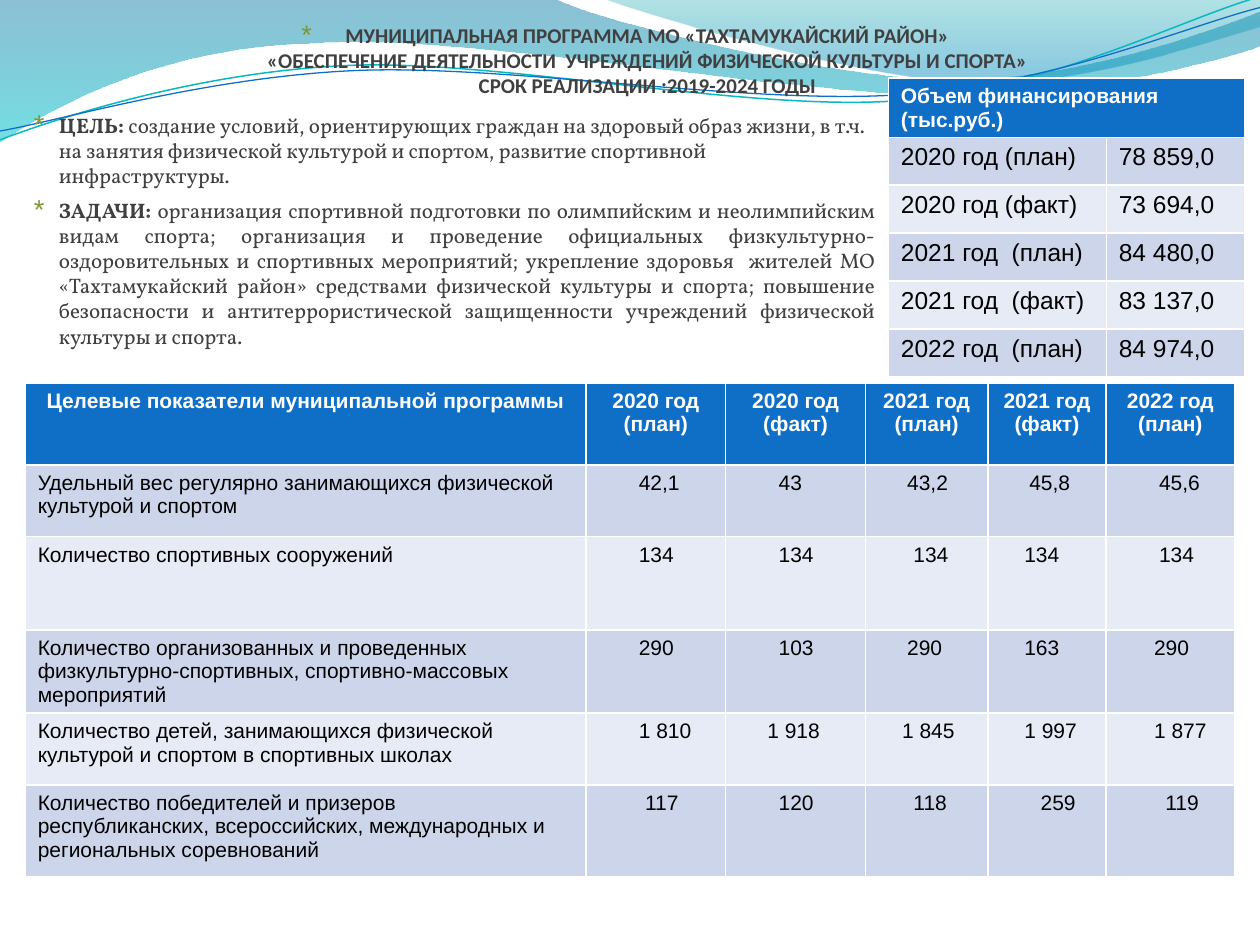
from lxml.etree import SubElement
from pptx import Presentation
from pptx.dml.color import RGBColor
from pptx.enum.text import PP_ALIGN as Align
from pptx.oxml.ns import qn
from pptx.util import Inches, Pt

COLORS = {
    "white": "FFFFFF", "black": "000000", "text": "404040", "bullet": "7E9632",
    "header": "0F6FC6", "odd": "CCD5EA", "even": "E7EBF5", "teal": "0AB8BF",
    "deep blue": "0074A1", "cyan": "00C6CF", "sea": "00A1A9", "sky": "008BBF",
}

# Curves: a start point, then straight (2 numbers) or cubic (6 numbers) steps
LEFT_WAVE = [(0, 0), (4.4, -0.01), (4.76, 0.17, 6.64, 0.63, 7.58, 0.63),
             (8.53, 0.63, 9.58, 0.26, 10, 0.09), (10.01, 0.36),
             (9.83, 0.44, 8.7, 0.76, 7.46, 0.75), (6.22, 0.75, 3.82, 0.28, 2.57, 0.34),
             (1.29, 0.36, 0.46, 0.83, -0.01, 1.13)]
RIGHT_WAVE = [(4.79, -0.01), (5.09, 0.11, 6.82, 0.62, 7.69, 0.65),
              (8.56, 0.69, 9.61, 0.32, 10, 0.21), (10, 0)]
TEAL_LINE = [(0, 1.11), (0.48, 0.93, 1.58, 0.57, 2.77, 0.52),
             (3.95, 0.47, 5.93, 0.89, 7.13, 0.8), (8.33, 0.71, 9.38, 0.15, 9.98, -0.02)]
BLUE_LINE = [(0, 1.04), (0.47, 0.96, 1.64, 0.61, 2.83, 0.56),
             (4.03, 0.51, 5.97, 0.84, 7.17, 0.75), (8.36, 0.67, 9.41, 0.21, 10, 0.06)]

TITLE = ("МУНИЦИПАЛЬНАЯ ПРОГРАММА МО «ТАХТАМУКАЙСКИЙ РАЙОН»\v"
         "«ОБЕСПЕЧЕНИЕ ДЕЯТЕЛЬНОСТИ  УЧРЕЖДЕНИЙ ФИЗИЧЕСКОЙ КУЛЬТУРЫ И СПОРТА»\v"
         "СРОК РЕАЛИЗАЦИИ :2019-2024 ГОДЫ")
GOAL = ("создание условий, ориентирующих граждан на здоровый образ жизни, в т.ч. на занятия "
        "физической культурой и спортом, развитие спортивной инфраструктуры.")
TASKS = ("организация спортивной подготовки по олимпийским и неолимпийским видам спорта; "
         "организация и проведение официальных физкультурно-оздоровительных и спортивных "
         "мероприятий; укрепление здоровья  жителей МО «Тахтамукайский район» средствами "
         "физической культуры и спорта; повышение безопасности и антитеррористической "
         "защищенности учреждений физической культуры и спорта.")

FUNDING = [
    ["Объем финансирования (тыс.руб.)", ""],
    ["2020 год (план)", "78 859,0"],
    ["2020 год (факт)", "73 694,0"],
    ["2021 год  (план)", "84 480,0"],
    ["2021 год  (факт)", "83 137,0"],
    ["2022 год  (план)", "84 974,0"],
]
TARGETS = [
    ["Целевые показатели муниципальной программы", "2020 год\n(план)", "2020 год (факт)",
     "2021 год\n(план)", "2021 год\n(факт)", "2022 год\n(план)"],
    ["Удельный вес регулярно занимающихся физической культурой и спортом",
     "42,1", "43", "43,2", "45,8", "45,6"],
    ["Количество спортивных сооружений", "134", "134", "134", "134", "134"],
    ["Количество организованных и проведенных физкультурно-спортивных, "
     "спортивно-массовых мероприятий", "290", "103", "290", "163", "290"],
    ["Количество детей, занимающихся физической культурой и спортом в спортивных школах",
     "1 810", "1 918", "1 845", "1 997", "1 877"],
    ["Количество победителей и призеров республиканских, всероссийских, международных и "
     "региональных соревнований", "117", "120", "118", "259", "119"],
]
# Left cell margins that place the target values, in inches
TARGET_MARGINS = [
    [0.1, 0.42, 0.42, 0.33, 0.33, 0.42],
    [0.1, 0.42, 0.42, 0.38, 0.29, 0.42],
    [0.1, 0.42, 0.42, 0.33, 0.29, 0.38],
    [0.1, 0.42, 0.33, 0.29, 0.29, 0.38],
    [0.1, 0.47, 0.42, 0.38, 0.42, 0.47],
]


def color(name):
    return RGBColor.from_string(COLORS[name])


class SlideBuilder:
    def __init__(self, slide):
        self.slide = slide

    def curve(self, steps, closed=False):
        """Draw the control polygon in 1/100 inch, then bend its cubic steps."""
        points = [(round(step[i] * 100), round(step[i + 1] * 100))
                  for step in steps for i in range(0, len(step), 2)]
        builder = self.slide.shapes.build_freeform(*points[0], scale=Inches(0.01))
        builder.add_line_segments(points[1:], close=closed)
        shape = builder.convert_to_shape()
        shape.shadow.inherit = False
        segments = iter(list(shape.element.iter(qn("a:lnTo"))))
        for step in steps[1:]:
            first = next(segments)
            if len(step) == 6:
                first.tag = qn("a:cubicBezTo")
                for _ in range(2):
                    segment = next(segments)
                    first.append(segment[0])
                    segment.getparent().remove(segment)
        return shape

    def wave(self, steps, stops):
        shape = self.curve(steps, closed=True)
        shape.line.fill.background()
        shape.fill.gradient()
        shape.fill.gradient_angle = 270
        for stop, (position, name, _) in zip(shape.fill.gradient_stops, stops):
            stop.position = position
            stop.color.rgb = color(name)
        for element, (_, _, opacity) in zip(shape.element.iter(qn("a:srgbClr")), stops):
            SubElement(element, qn("a:alpha"), val=str(opacity * 1000))

    def wave_line(self, steps, name, width):
        shape = self.curve(steps)
        shape.fill.background()
        shape.line.color.rgb = color(name)
        shape.line.width = Pt(width)

    def text_box(self, left, top, width, height):
        shape = self.slide.shapes.add_textbox(*map(Inches, (left, top, width, height)))
        shape.text_frame.word_wrap = True
        return shape.text_frame

    def style(self, paragraph, font, size, name, align, bold=None):
        paragraph.alignment = align
        paragraph.font.name = font
        paragraph.font.size = Pt(size)
        paragraph.font.color.rgb = color(name)
        paragraph.font.bold = bold

    def bullet(self, paragraph, margin, hanging, percent):
        properties = paragraph._p.get_or_add_pPr()
        properties.set("marL", str(Inches(margin)))
        properties.set("indent", str(-Inches(hanging)))
        bullet_color = SubElement(properties, qn("a:buClr"))
        SubElement(bullet_color, qn("a:srgbClr"), val=COLORS["bullet"])
        SubElement(properties, qn("a:buSzPct"), val=str(percent * 1000))
        SubElement(properties, qn("a:buFont"), typeface="Arial")
        SubElement(properties, qn("a:buChar"), char="*")

    def table(self, left, top, widths, heights, rows, size, header_align, margins=None):
        """The default table style supplies the white cell borders."""
        frame = self.slide.shapes.add_table(
            len(rows), len(widths), Inches(left), Inches(top),
            Inches(sum(widths)), Inches(sum(heights)))
        table = frame.table
        for column, width in zip(table.columns, widths):
            column.width = Inches(width)
        for r, (row, height) in enumerate(zip(rows, heights)):
            table.rows[r].height = Inches(height)
            header = r == 0
            for c, text in enumerate(row):
                cell = table.cell(r, c)
                cell.fill.solid()
                cell.fill.fore_color.rgb = color("header" if header else "odd" if r % 2 else "even")
                cell.margin_bottom = 0
                if margins and not header:
                    cell.margin_left = Inches(margins[r - 1][c])
                cell.text = text
                for paragraph in cell.text_frame.paragraphs:
                    self.style(paragraph, "Arial", 12 if header else size,
                               "white" if header else "black",
                               header_align if header else Align.LEFT, header)
        return table


def main():
    presentation = Presentation()
    presentation.slide_width, presentation.slide_height = Inches(10), Inches(7.5)
    builder = SlideBuilder(presentation.slides.add_slide(presentation.slide_layouts[6]))

    # Wavy header
    builder.wave(LEFT_WAVE, [(0, "deep blue", 45), (1, "cyan", 55)])
    builder.wave(RIGHT_WAVE, [(0, "sea", 30), (0.8, "sky", 45)])
    builder.wave_line(TEAL_LINE, "teal", 0.85)
    builder.wave_line(BLUE_LINE, "header", 0.75)

    # Title
    title = builder.text_box(0.28, 0.13, 9.37, 0.94).paragraphs[0]
    title.text = TITLE
    builder.bullet(title, 0.35, 0.35, 128)
    builder.style(title, "Calibri", 12, "text", Align.CENTER, True)

    # Funding table
    funding = builder.table(7.05, 0.62, [1.73, 1.1], [0.47] + [0.38] * 5,
                            FUNDING, 14, Align.LEFT)
    funding.cell(0, 0).merge(funding.cell(0, 1))

    # Goal and tasks
    body = builder.text_box(0.12, 0.84, 6.93, 2.52)
    sections = [("ЦЕЛЬ: ", GOAL, Align.LEFT), ("ЗАДАЧИ: ", TASKS, Align.JUSTIFY)]
    for i, (label, text, align) in enumerate(sections):
        paragraph = body.add_paragraph() if i else body.paragraphs[0]
        paragraph.space_before, paragraph.space_after = Pt(2.4), Pt(3)
        builder.bullet(paragraph, 0.25, 0.2, 130)
        builder.style(paragraph, "Vollkorn", 12, "text", align)
        for part, bold in ((label, True), (text, False)):
            run = paragraph.add_run()
            run.text = part
            run.font.bold = bold

    # Target indicators table
    builder.table(0.2, 3.04, [4.45, 1.11, 1.11, 0.97, 0.94, 1.02],
                  [0.65, 0.57, 0.74, 0.66, 0.57, 0.73], TARGETS, 12, Align.CENTER, TARGET_MARGINS)

    presentation.save("out.pptx")


if __name__ == "__main__":
    main()
